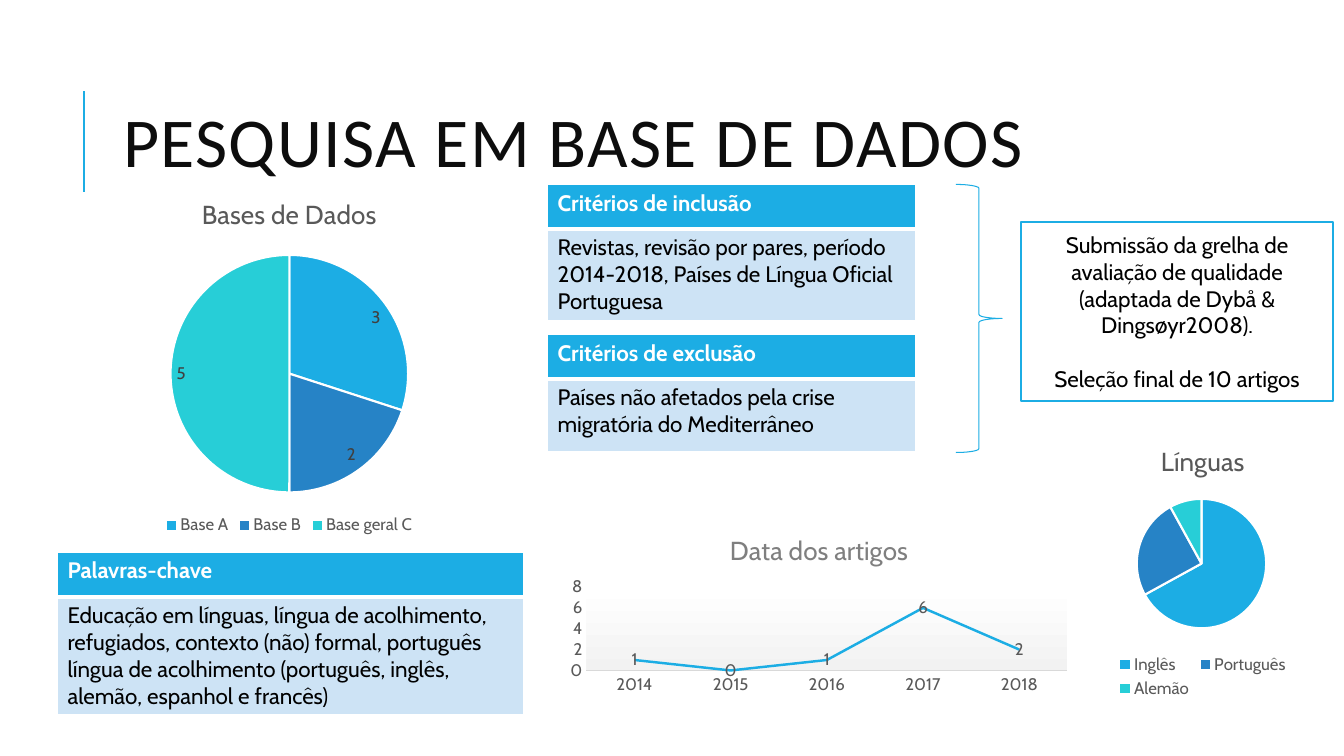
from dataclasses import dataclass

from lxml.etree import SubElement
from pptx import Presentation
from pptx.chart.chart import Chart
from pptx.chart.data import CategoryChartData
from pptx.dml.color import RGBColor
from pptx.enum.chart import XL_CHART_TYPE, XL_LABEL_POSITION, XL_LEGEND_POSITION, XL_MARKER_STYLE, XL_TICK_MARK
from pptx.enum.shapes import MSO_CONNECTOR, MSO_SHAPE
from pptx.enum.text import MSO_ANCHOR, PP_ALIGN
from pptx.oxml import parse_xml
from pptx.oxml.ns import nsdecls, qn
from pptx.slide import Slide
from pptx.util import Inches, Pt

Box = tuple[float, float, float, float]


@dataclass(frozen=True)
class Theme:
    accent: str = "1CADE4"
    slices: tuple[str, ...] = ("1CADE4", "2683C6", "27CED7")
    pale: str = "CDE3F5"
    white: str = "FFFFFF"
    black: str = "000000"
    heading: str = "0D0D0D"
    grey: str = "595959"
    light_grey: str = "7F7F7F"
    label: str = "404040"
    axis: str = "D9D9D9"
    plot_end: str = "F2F2F2"
    font: str = "Cabin"
    title_font: str = "Calibri"
    title_size: float = 50
    body_size: float = 16
    chart_title_size: float = 18.6
    chart_size: float = 12


@dataclass(frozen=True)
class Card:
    heading: str
    body: str
    left: float
    top: float
    width: float
    body_height: float


@dataclass(frozen=True)
class Pie:
    title: str
    values: dict[str, int]
    box: Box
    plot: Box
    labelled: bool


T = Theme()
HEADER_HEIGHT = 0.44

CARDS = [
    Card("Palavras-chave",
         "Educação em línguas, língua de acolhimento, refugiados, contexto (não) formal, "
         "português língua de acolhimento (português, inglês, alemão, espanhol e francês)",
         0.57, 5.48, 4.62, 1.16),
    Card("Critérios de exclusão", "Países não afetados pela crise migratória do Mediterrâneo",
         5.43, 3.32, 3.65, 0.72),
    Card("Critérios de inclusão",
         "Revistas, revisão por pares, período 2014-2018, Países de Língua Oficial Portuguesa",
         5.43, 1.83, 3.65, 0.9),
]
PIES = [
    Pie("Bases de Dados", {"Base A": 3, "Base B": 2, "Base geral C": 5},
        (0.18, 1.78, 5.38, 3.57), (0.28, 0.21, 0.44, 0.66), True),
    Pie("Línguas", {"Inglês": 67, "Português": 25, "Alemão": 8},
        (10.62, 4.24, 2.62, 2.73), (0.25, 0.26, 0.49, 0.47), False),
]
ARTICLES = {"2014": 1, "2015": 0, "2016": 1, "2017": 6, "2018": 2}


def rgb(color: str) -> RGBColor:
    return RGBColor.from_string(color)


def style(font, size: float, color: str, name: str = T.font, bold: bool = False) -> None:
    font.size, font.name, font.bold = Pt(size), name, bold
    font.color.rgb = rgb(color)


def set_borders(cell, top: float, bottom: float) -> None:
    widths = {"lnL": 1, "lnR": 1, "lnT": top, "lnB": bottom}
    for i, (tag, width) in enumerate(widths.items()):
        cell._tc.get_or_add_tcPr().insert(i, parse_xml(
            f'<a:{tag} {nsdecls("a")} w="{Pt(width)}"><a:solidFill>'
            f'<a:srgbClr val="{T.white}"/></a:solidFill></a:{tag}>'))


def add_card(s: Slide, card: Card) -> None:
    heights = (HEADER_HEIGHT, card.body_height)
    table = s.shapes.add_table(2, 1, Inches(card.left), Inches(card.top),
                               Inches(card.width), Inches(sum(heights))).table
    table.horz_banding = False
    rows = [(card.heading, T.accent, T.white, True, 1, 3),
            (card.body, T.pale, T.black, False, 3, 1)]
    for i, (text, fill, color, bold, top, bottom) in enumerate(rows):
        table.rows[i].height = Inches(heights[i])
        cell = table.cell(i, 0)
        cell.text = text
        cell.fill.solid()
        cell.fill.fore_color.rgb = rgb(fill)
        style(cell.text_frame.paragraphs[0].font, T.body_size, color, bold=bold)
        set_borders(cell, top, bottom)


def add_chart(s: Slide, kind: XL_CHART_TYPE, title: str, title_color: str,
              values: dict[str, int], box: Box, plot: Box) -> Chart:
    data = CategoryChartData()
    data.categories = list(values)
    data.add_series(title, list(values.values()))
    chart = s.shapes.add_chart(kind, *map(Inches, box), data).chart
    style(chart.font, T.chart_size, T.grey)
    chart.has_title = True
    chart.chart_title.include_in_layout = False
    p = chart.chart_title.text_frame.paragraphs[0]
    p.text = title
    style(p.font, T.chart_title_size, title_color)

    # Place the inner plot as fractions of the chart
    area = chart._chartSpace.chart.plotArea
    for old in area.findall(qn("c:layout")):
        area.remove(old)
    layout = parse_xml(f'<c:layout {nsdecls("c")}><c:manualLayout/></c:layout>')
    settings = [("layoutTarget", "inner"), ("xMode", "edge"), ("yMode", "edge"),
                *zip("xywh", plot)]
    for tag, value in settings:
        SubElement(layout[0], qn(f"c:{tag}")).set("val", str(value))
    area.insert(0, layout)
    return chart


def show_values(plot, color: str, position: XL_LABEL_POSITION) -> None:
    plot.has_data_labels = True
    labels = plot.data_labels
    labels.show_value = True
    labels.position = position
    style(labels.font, T.chart_size, color)


def add_pie(s: Slide, pie: Pie) -> None:
    chart = add_chart(s, XL_CHART_TYPE.PIE, pie.title, T.grey, pie.values, pie.box, pie.plot)
    chart.has_legend = True
    chart.legend.position = XL_LEGEND_POSITION.BOTTOM
    chart.legend.include_in_layout = False
    style(chart.legend.font, T.chart_size, T.grey)
    plot = chart.plots[0]
    plot.vary_by_categories = True
    for i, color in enumerate(T.slices):
        fmt = plot.series[0].points[i].format
        fmt.fill.solid()
        fmt.fill.fore_color.rgb = rgb(color)
        fmt.line.color.rgb = rgb(T.white)
        fmt.line.width = Pt(1.5)
    if pie.labelled:
        show_values(plot, T.label, XL_LABEL_POSITION.INSIDE_END)


def add_timeline(s: Slide) -> None:
    chart = add_chart(s, XL_CHART_TYPE.LINE, "Data dos artigos", T.light_grey, ARTICLES,
                      (5.56, 5.14, 5.13, 1.8), (0.05, 0.38, 0.93, 0.46))
    chart.has_legend = False
    plot = chart.plots[0]
    plot.vary_by_categories = False
    series = plot.series[0]
    series.smooth = False
    series.marker.style = XL_MARKER_STYLE.NONE
    series.format.line.color.rgb = rgb(T.accent)
    series.format.line.width = Pt(1.75)
    show_values(plot, T.grey, XL_LABEL_POSITION.CENTER)
    for axis in (chart.category_axis, chart.value_axis):
        axis.has_major_gridlines = False
        axis.major_tick_mark = axis.minor_tick_mark = XL_TICK_MARK.NONE
        style(axis.tick_labels.font, T.chart_size, T.grey)
    chart.category_axis.format.line.color.rgb = rgb(T.axis)
    chart.category_axis.format.line.width = Pt(0.75)
    values = chart.value_axis
    values.format.line.fill.background()
    values.minimum_scale, values.maximum_scale, values.major_unit = 0, 8, 2
    chart._chartSpace.chart.plotArea.append(parse_xml(
        f'<c:spPr {nsdecls("c", "a")}><a:gradFill><a:gsLst>'
        f'<a:gs pos="0"><a:srgbClr val="{T.white}"/></a:gs>'
        f'<a:gs pos="100000"><a:srgbClr val="{T.plot_end}"/></a:gs>'
        '</a:gsLst><a:lin ang="5400000" scaled="0"/></a:gradFill></c:spPr>'))


def add_outline(s: Slide, kind: MSO_SHAPE, box: Box, width: float):
    sp = s.shapes.add_shape(kind, *map(Inches, box))
    sp.shadow.inherit = False
    sp.fill.background()
    sp.line.color.rgb = rgb(T.accent)
    sp.line.width = Pt(width)
    return sp


def add_title(s: Slide) -> None:
    rule = s.shapes.add_connector(MSO_CONNECTOR.STRAIGHT, *map(Inches, (0.83, 1.9, 0.83, 0.9)))
    rule.line.color.rgb = rgb(T.accent)
    rule.line.width = Pt(1.5)
    SubElement(rule._element.spPr, qn("a:effectLst"))
    title = s.shapes.title
    title.left, title.top, title.width, title.height = map(Inches, (1.12, 0.64, 10.63, 1.64))
    tf = title.text_frame
    tf.text = "PESQUISA EM BASE DE DADOS"
    tf.vertical_anchor = MSO_ANCHOR.MIDDLE
    p = tf.paragraphs[0]
    p.alignment, p.line_spacing = PP_ALIGN.LEFT, 0.8
    style(p.font, T.title_size, T.heading, T.title_font)
    p.runs[0].font._element.set("spc", "100")


def add_outcome(s: Slide) -> None:
    add_outline(s, MSO_SHAPE.RIGHT_BRACE, (9.48, 1.83, 0.46, 2.66), 0.75)
    sp = add_outline(s, MSO_SHAPE.RECTANGLE, (10.13, 2.2, 3.09, 1.78), 1.25)
    sp.fill.solid()
    sp.fill.fore_color.rgb = rgb(T.white)
    tf = sp.text_frame
    tf.word_wrap = True
    tf.text = ("Submissão da grelha de avaliação de qualidade (adaptada de Dybå & Dingsøyr2008).\n"
               "Seleção final de 10 artigos")
    for p in tf.paragraphs:
        p.alignment = PP_ALIGN.CENTER
        style(p.font, T.body_size, T.black)
    tf.paragraphs[1].space_before = Pt(19)


def main() -> None:
    prs = Presentation()
    prs.slide_width, prs.slide_height = Inches(13.33), Inches(7.5)
    s = prs.slides.add_slide(prs.slide_layouts[5])
    add_title(s)
    for card in CARDS:
        add_card(s, card)
    add_outcome(s)
    add_timeline(s)
    for pie in PIES:
        add_pie(s, pie)
    prs.save("out.pptx")


if __name__ == "__main__":
    main()
